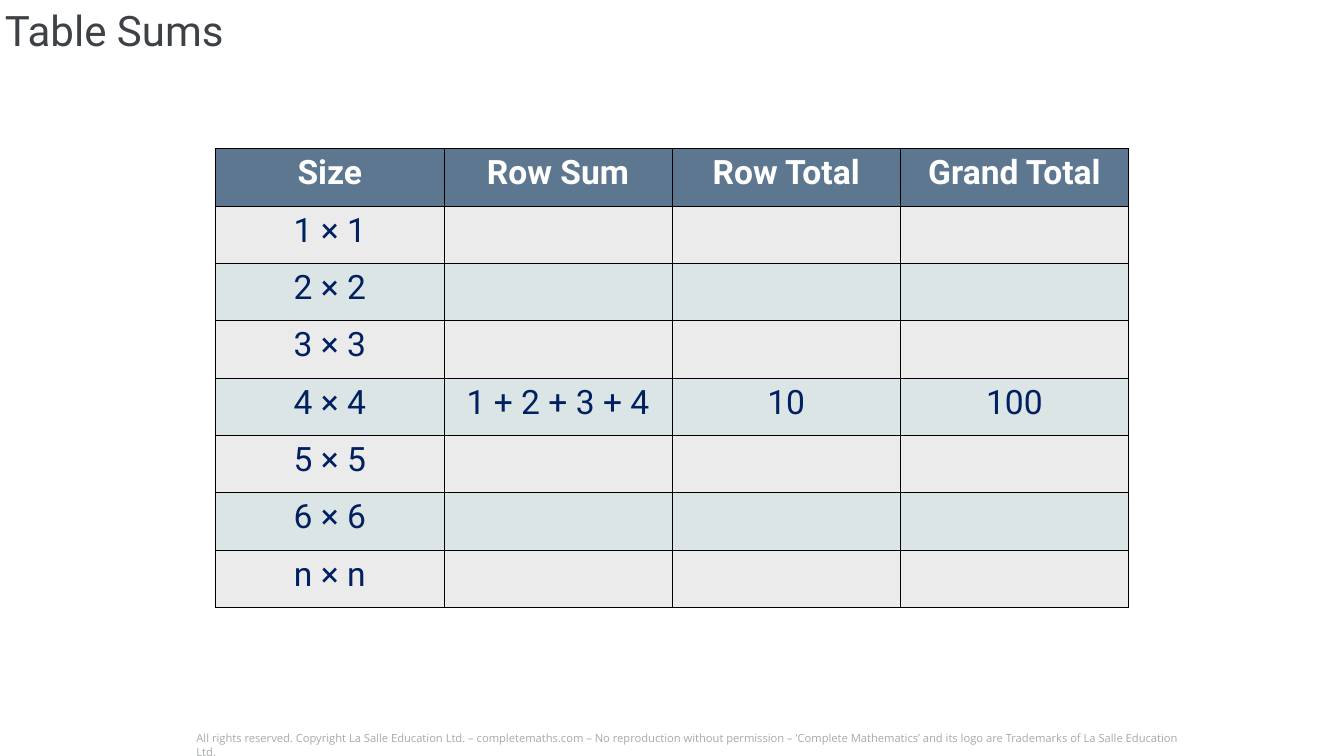
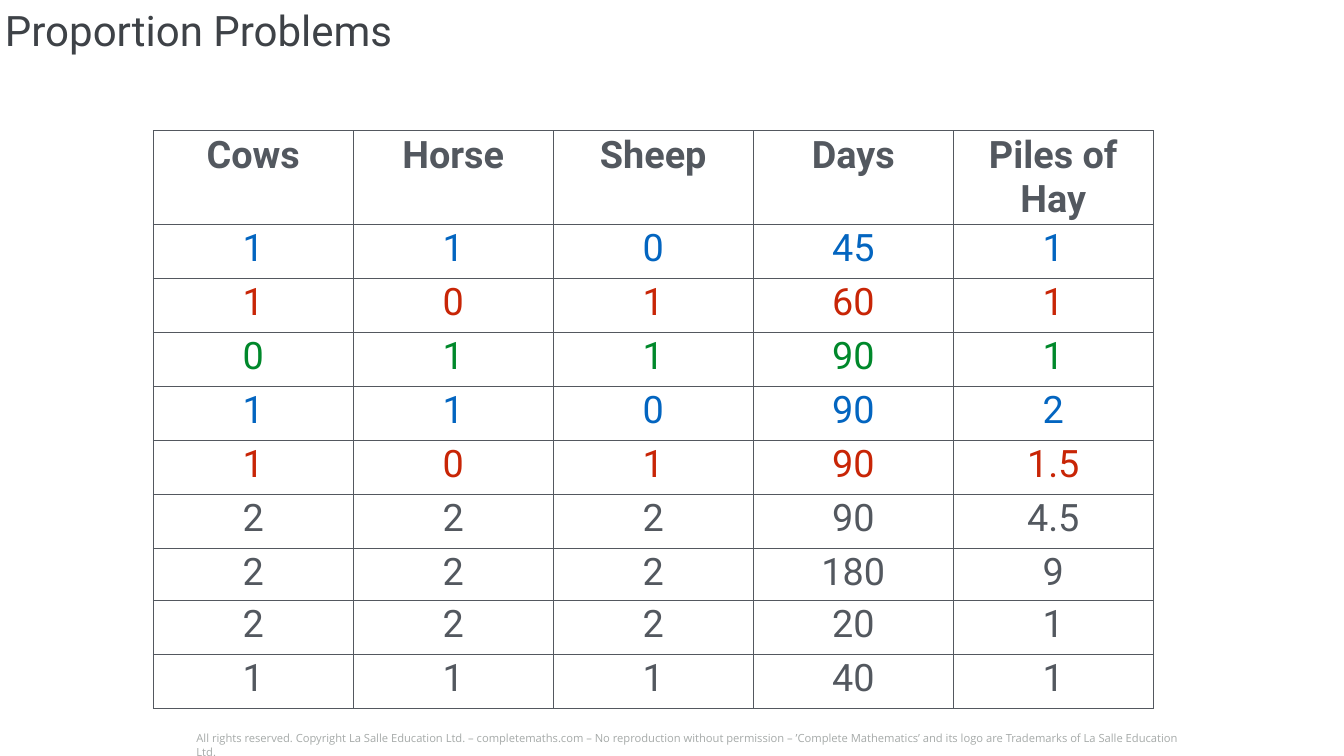
from dataclasses import dataclass
from typing import Optional

from lxml.etree import SubElement
from pptx import Presentation
from pptx.dml.color import RGBColor
from pptx.enum.text import MSO_ANCHOR as Anchor, MSO_AUTO_SIZE as AutoSize, PP_ALIGN as Align
from pptx.oxml.ns import qn
from pptx.util import Cm, Pt

BLACK = RGBColor(0x00, 0x00, 0x00)
WHITE = RGBColor(0xFF, 0xFF, 0xFF)
TITLE_GREY = RGBColor(0x3E, 0x42, 0x47)
FOOTER_GREY = RGBColor(0xA6, 0xAA, 0xA9)
STEEL = RGBColor(0x5E, 0x77, 0x90)
PALE_GREY = RGBColor(0xEB, 0xEB, 0xEB)
PALE_TEAL = RGBColor(0xDC, 0xE5, 0xE6)
NAVY = RGBColor(0x00, 0x20, 0x60)
SLATE = RGBColor(0x53, 0x58, 0x5F)
BLUE = RGBColor(0x03, 0x65, 0xC0)
RED = RGBColor(0xC8, 0x25, 0x06)
GREEN = RGBColor(0x00, 0x88, 0x2B)

MAIN_FONT = "Roboto"
FOOTER_FONT = "Open Sans"
INSET = Cm(0.25)
FOOTER = (
    "All rights reserved. Copyright La Salle Education Ltd. – completemaths.com – "
    "No reproduction without permission – ’Complete Mathematics’ and its logo are "
    "Trademarks of La Salle Education Ltd."
)


@dataclass(frozen=True)
class Row:
    texts: tuple[str, ...]
    color: RGBColor
    height: float
    fill: Optional[RGBColor] = None
    bold: bool = False


@dataclass(frozen=True)
class Grid:
    left: float
    top: float
    column_width: float
    rows: list[Row]
    size: int
    border: RGBColor
    inset_x: float
    inset_y: float


def write(frame, text: str, *, size: int, color: RGBColor, font: str = MAIN_FONT,
          bold: bool = False, align: Align = Align.LEFT) -> None:
    para = frame.paragraphs[0]
    para.alignment = align
    span = para.add_run()
    span.text = text
    span.font.name = font
    span.font.size = Pt(size)
    span.font.bold = bold
    span.font.color.rgb = color


def set_frame(shape, left: float, top: float, width: float, height: float) -> None:
    shape.left, shape.top, shape.width, shape.height = map(Cm, (left, top, width, height))
    frame = shape.text_frame
    frame.word_wrap = True
    frame.auto_size = AutoSize.NONE
    frame.vertical_anchor = Anchor.TOP
    frame.margin_left = frame.margin_right = INSET
    frame.margin_top = frame.margin_bottom = INSET


def add_page(deck, title: str):
    page = deck.slides.add_slide(deck.slide_layouts[5])
    set_frame(page.shapes.title, 0, 0, 29.21, 2.64)
    write(page.shapes.title.text_frame, title, size=60, color=TITLE_GREY)
    box = page.shapes.add_textbox(0, 0, 0, 0)
    set_frame(box, 9.65, 36.63, 50.8, 1.3)
    write(box.text_frame, FOOTER, size=16, color=FOOTER_GREY, font=FOOTER_FONT)
    return page


def add_borders(cell, color: RGBColor) -> None:
    properties = cell._tc.get_or_add_tcPr()
    for side in ("a:lnL", "a:lnR", "a:lnT", "a:lnB"):
        line = SubElement(properties, qn(side), w=str(Pt(1)))
        SubElement(SubElement(line, qn("a:solidFill")), qn("a:srgbClr"), val=str(color))


def add_grid(page, grid: Grid) -> None:
    column_count = len(grid.rows[0].texts)
    table = page.shapes.add_table(
        len(grid.rows), column_count, Cm(grid.left), Cm(grid.top),
        Cm(grid.column_width * column_count), Cm(sum(row.height for row in grid.rows)),
    ).table
    table.first_row = False
    table.horz_banding = False
    for column in table.columns:
        column.width = Cm(grid.column_width)
    for index, row in enumerate(grid.rows):
        table.rows[index].height = Cm(row.height)
        for cell, text in zip(table.rows[index].cells, row.texts):
            cell.margin_left = cell.margin_right = Cm(grid.inset_x)
            cell.margin_top = cell.margin_bottom = Cm(grid.inset_y)
            cell.vertical_anchor = Anchor.TOP
            add_borders(cell, grid.border)
            if row.fill is None:
                cell.fill.background()
            else:
                cell.fill.solid()
                cell.fill.fore_color.rgb = row.fill
            if text:
                write(cell.text_frame, text, size=grid.size, color=row.color,
                      bold=row.bold, align=Align.CENTER)


def sum_rows() -> list[Row]:
    height = 2.89
    header = ("Size", "Row Sum", "Row Total", "Grand Total")
    rows = [Row(header, WHITE, height, STEEL, True)]
    for index, size in enumerate("123456n"):
        answers = ("1 + 2 + 3 + 4", "10", "100") if size == "4" else ("", "", "")
        fill = PALE_TEAL if index % 2 else PALE_GREY
        rows.append(Row((f"{size} × {size}", *answers), NAVY, height, fill))
    return rows


def hay_rows() -> list[Row]:
    height = 2.72
    header = ("Cows", "Horse", "Sheep", "Days", "Piles of Hay")
    return [
        Row(header, SLATE, height, bold=True),
        Row(("1", "1", "0", "45", "1"), BLUE, height),
        Row(("1", "0", "1", "60", "1"), RED, height),
        Row(("0", "1", "1", "90", "1"), GREEN, height),
        Row(("1", "1", "0", "90", "2"), BLUE, height),
        Row(("1", "0", "1", "90", "1.5"), RED, height),
        Row(("2", "2", "2", "90", "4.5"), SLATE, height),
        Row(("2", "2", "2", "180", "9"), SLATE, 2.62),
        Row(("2", "2", "2", "20", "1"), SLATE, height),
        Row(("1", "1", "1", "40", "1"), SLATE, height),
    ]


def main() -> None:
    deck = Presentation()
    deck.slide_width, deck.slide_height = Cm(67.73), Cm(38.1)
    add_grid(
        add_page(deck, "Table Sums"),
        Grid(10.87, 7.49, 11.5, sum_rows(), 48, BLACK, inset_x=0.5, inset_y=0.25),
    )
    add_grid(
        add_page(deck, "Proportion Problems"),
        Grid(7.72, 6.58, 10.08, hay_rows(), 54, SLATE, inset_x=0.25, inset_y=0.13),
    )
    deck.save("out.pptx")


if __name__ == "__main__":
    main()
